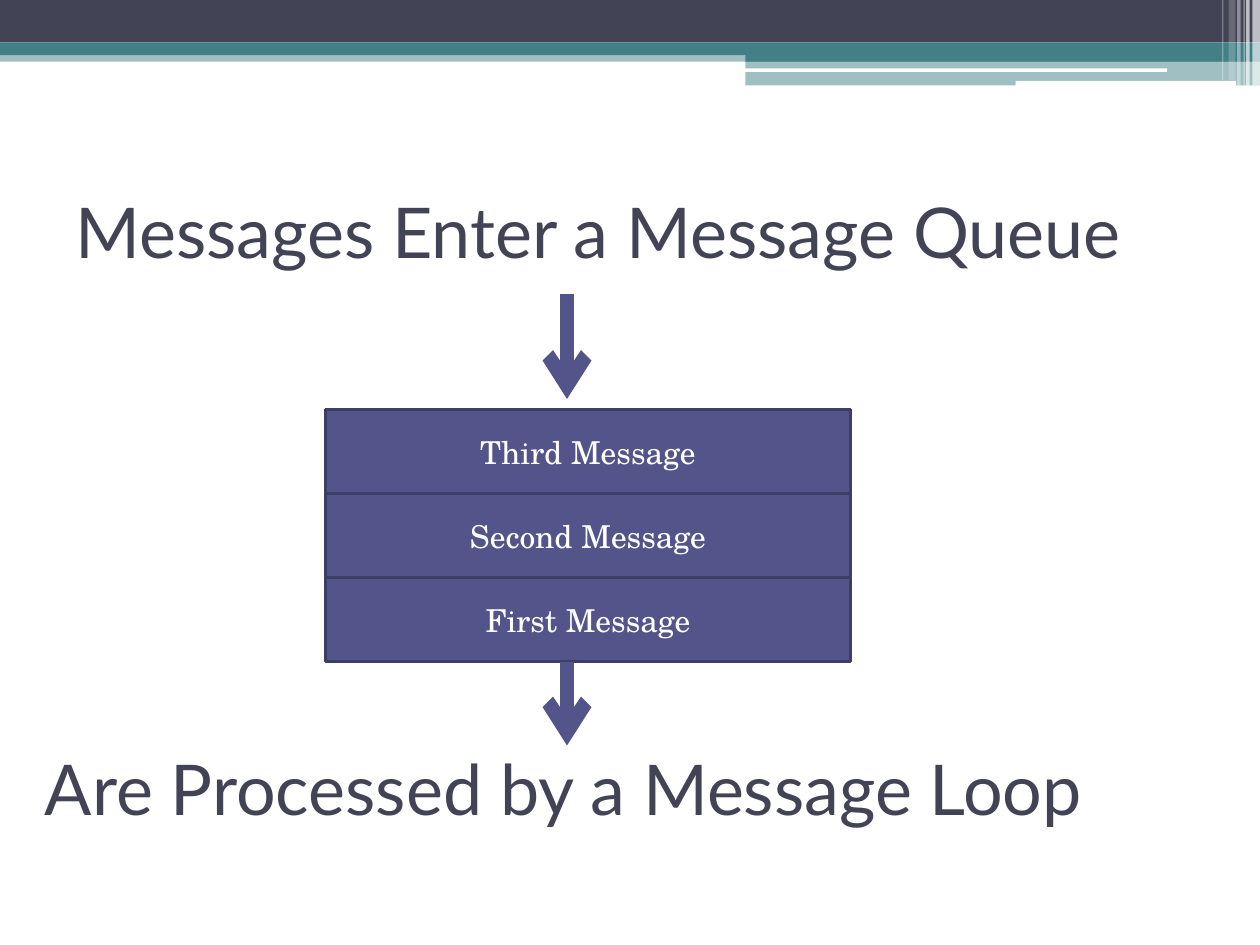
from lxml import etree
from pptx import Presentation
from pptx.dml.color import RGBColor
from pptx.enum.shapes import MSO_CONNECTOR, MSO_SHAPE
from pptx.enum.text import MSO_ANCHOR, MSO_AUTO_SIZE, PP_ALIGN
from pptx.oxml.ns import qn
from pptx.util import Pt

RECT, ROUND = MSO_SHAPE.RECTANGLE, MSO_SHAPE.ROUNDED_RECTANGLE
STRAIGHT = MSO_CONNECTOR.STRAIGHT
MIDDLE, TOP = MSO_ANCHOR.MIDDLE, MSO_ANCHOR.TOP
CENTER = PP_ALIGN.CENTER

COLORS = {"dark": "424456", "teal": "438086", "white": "FFFFFF",
          "indigo": "53548A", "edge": "3D3E66"}
HEADING_FONT, BODY_FONT = "Lato", "TeX Gyre Schola"
SLIDE_W, SLIDE_H = 720, 540


def rgb(name):
    return RGBColor.from_string(COLORS[name])


def add_block(s, kind, x, y, w, h, color, opacity=100):
    """Add a borderless filled shape; opacity is in percent."""
    sp = s.shapes.add_shape(kind, Pt(x), Pt(y), Pt(w), Pt(h))
    sp.shadow.inherit = False
    sp.line.fill.background()
    sp.fill.solid()
    sp.fill.fore_color.rgb = rgb(color)
    if opacity < 100:
        clr = sp.fill._xPr.find(qn("a:solidFill"))[0]
        etree.SubElement(clr, qn("a:alpha"), val=str(opacity * 1000))
    return sp


def add_header(s, x, y, w):
    """Draw the layered band, its white rules and the stripes at its right end."""
    right = x + w
    step = x + 426
    add_block(s, RECT, x, y + 28.8, w, 6.5, "teal", 50)
    add_block(s, RECT, x, y, w, 24.3, "dark")
    add_block(s, RECT, x, y + 24.3, w, 7.2, "teal")
    add_block(s, RECT, step, y + 28.1, right - step, 7.2, "teal")
    add_block(s, RECT, step, y + 34.9, right - step, 14, "teal", 50)
    for dx, dy, width, height in ((425.5, 39.1, 241.5, 2), (580.3, 46.2, 126, 2.8)):
        add_block(s, ROUND, x + dx, y + dy, width, height, "white")
    # distance from the right edge, width, height, opacity
    for dx, width, height, opacity in (
            (4.3, 4.3, 49, 65), (7.9, 2, 49, 65), (9.4, 0.7, 49, 60),
            (13, 2, 49, 40), (18, 4, 46, 20), (21.6, 0.7, 46, 30)):
        add_block(s, RECT, right - dx, y, width, height, "white", opacity)


def add_heading(s, x, y, w, h, text, anchor, wrap):
    tf = s.shapes.add_textbox(Pt(x), Pt(y), Pt(w), Pt(h)).text_frame
    tf.word_wrap = wrap
    tf.auto_size = MSO_AUTO_SIZE.NONE if wrap else MSO_AUTO_SIZE.SHAPE_TO_FIT_TEXT
    tf.vertical_anchor = anchor
    p = tf.paragraphs[0]
    p.text = text
    p.font.name, p.font.size = HEADING_FONT, Pt(40)
    p.font.color.rgb = rgb("dark")


def add_queue(s, x, y, w, h, messages):
    """Stack the messages as equal rows filling the box."""
    row_h = h / len(messages)
    for i, message in enumerate(messages):
        sp = add_block(s, RECT, x, y + i * row_h, w, row_h, "indigo")
        sp.line.color.rgb = rgb("edge")
        sp.line.width = Pt(1.5)
        tf = sp.text_frame
        tf.vertical_anchor = MIDDLE
        p = tf.paragraphs[0]
        p.text = message
        p.alignment = CENTER
        p.font.name, p.font.size = BODY_FONT, Pt(18)
        p.font.color.rgb = rgb("white")


def add_down_arrow(s, x, top, bottom):
    c = s.shapes.add_connector(STRAIGHT, Pt(x), Pt(top), Pt(x), Pt(bottom))
    c.line.color.rgb = rgb("indigo")
    c.line.width = Pt(8)
    etree.SubElement(c.line._get_or_add_ln(), qn("a:tailEnd"), type="arrow")
    etree.SubElement(c._element.spPr, qn("a:effectLst"))


def main():
    prs = Presentation()
    prs.slide_width, prs.slide_height = Pt(SLIDE_W), Pt(SLIDE_H)
    s = prs.slides.add_slide(prs.slide_layouts[6])
    add_header(s, 0, 0, SLIDE_W)
    add_heading(s, 36, 90, 648, 84, "Messages Enter a Message Queue", MIDDLE, True)
    add_queue(s, 186, 234, 300, 144,
              ["Third Message", "Second Message", "First Message"])
    add_down_arrow(s, 324, 168, 228)
    add_heading(s, 18.6, 422.4, 611, 55.7, "Are Processed by a Message Loop", TOP, False)
    add_down_arrow(s, 324, 378, 426)
    prs.save("out.pptx")


if __name__ == "__main__":
    main()
